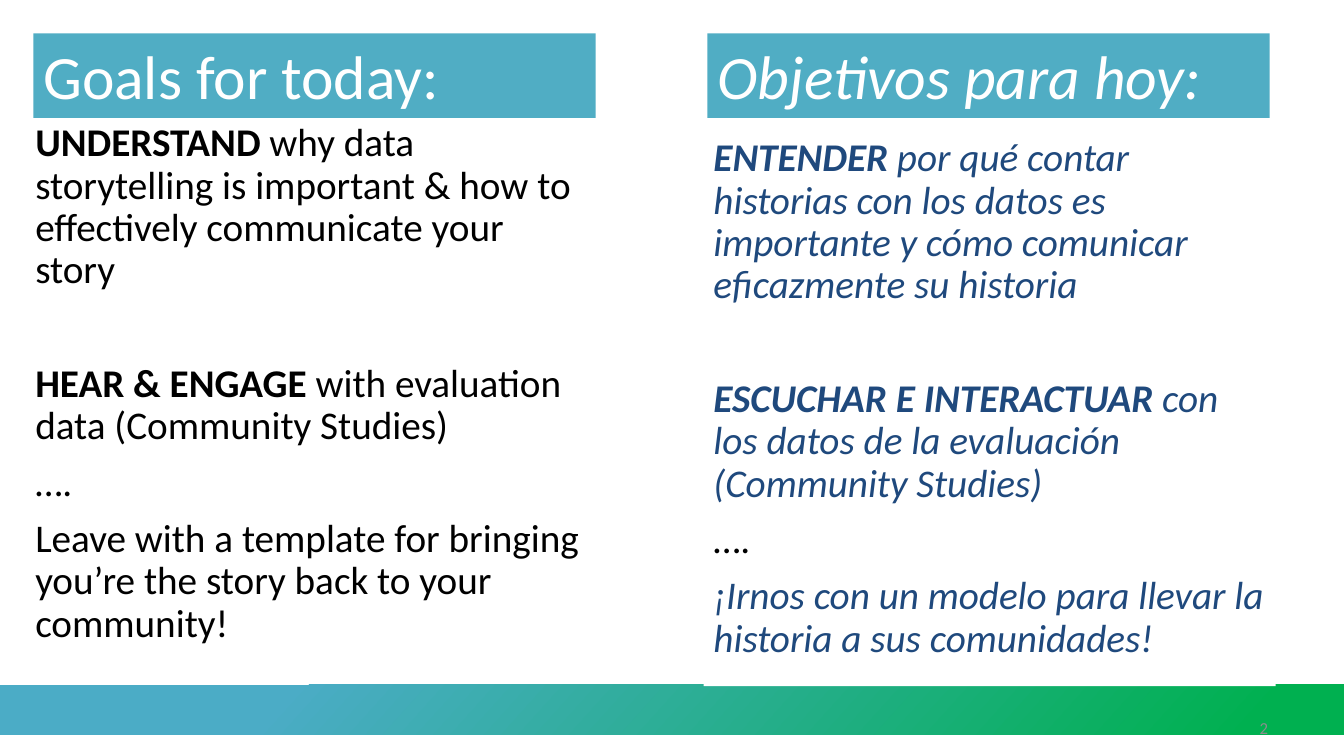
from dataclasses import dataclass

from pptx import Presentation
from pptx import util as u
from pptx.dml import color
from pptx.enum import shapes, text


@dataclass(frozen=True)
class Theme:
    font: str = "Calibri"
    title_size: int = 44
    body_size: int = 28
    number_size: int = 12
    white: str = "FFFFFF"
    black: str = "000000"
    navy: str = "1F497D"
    grey: str = "8C8C8C"
    banner: str = "50ADC4"
    footer_start: str = "4BACC6"
    footer_end: str = "00B050"


class GoalsSlide:
    def __init__(self, slide, theme):
        self.slide = slide
        self.theme = theme

    def box(self, left, top, width, height, fill=None):
        box = self.slide.shapes.add_textbox(
            u.Cm(left), u.Cm(top), u.Cm(width), u.Cm(height))
        box.text_frame.word_wrap = True
        if fill:
            box.fill.solid()
            box.fill.fore_color.rgb = color.RGBColor.from_string(fill)
        return box.text_frame

    def style(self, paragraph, size, ink, italic=False):
        font = paragraph.font
        font.name = self.theme.font
        font.size = u.Pt(size)
        font.italic = italic
        font.color.rgb = color.RGBColor.from_string(ink)

    def footer(self, top, width, height):
        band = self.slide.shapes.add_shape(
            shapes.MSO_SHAPE.RECTANGLE, 0, u.Cm(top), u.Cm(width), u.Cm(height))
        band.shadow.inherit = False
        band.line.fill.background()
        band.fill.gradient()
        band.fill.gradient_angle = 318
        stops = ((0.21, self.theme.footer_start), (0.93, self.theme.footer_end))
        for stop, (position, tint) in zip(band.fill.gradient_stops, stops):
            stop.position = position
            stop.color.rgb = color.RGBColor.from_string(tint)

    def heading(self, left, wording, italic):
        frame = self.box(left, 0.84, 14.17, 2.13, self.theme.banner)
        heading = frame.paragraphs[0]
        heading.add_run().text = wording
        self.style(heading, self.theme.title_size, self.theme.white, italic)

    def goals(self, left, top, goals, ink, italic):
        frame = self.box(left, top, 14.42, 13.94, self.theme.white)
        for index, (gap, lead, rest) in enumerate(goals):
            goal = frame.paragraphs[0] if index == 0 else frame.add_paragraph()
            goal.line_spacing = 0.9
            goal.space_before = u.Pt(gap)
            if lead:
                strong = goal.add_run()
                strong.text = lead
                strong.font.bold = True
            goal.add_run().text = rest
            ellipsis = rest == "…."
            self.style(goal, self.theme.body_size,
                       self.theme.black if ellipsis else ink,
                       italic and not ellipsis)

    def number(self, wording):
        frame = self.box(24.59, 17.83, 7.62, 1.02)
        frame.vertical_anchor = text.MSO_ANCHOR.MIDDLE
        number = frame.paragraphs[0]
        number.alignment = text.PP_ALIGN.RIGHT
        number.add_run().text = wording
        self.style(number, self.theme.number_size, self.theme.grey)


ENGLISH = (
    (0, "UNDERSTAND ", "why data storytelling is important & how to "
                       "effectively communicate your story"),
    (51, "HEAR & ENGAGE ", "with evaluation data (Community Studies)"),
    (10, "", "…."),
    (10, "", "Leave with a template for bringing you’re the story back "
             "to your community!"),
)
SPANISH = (
    (0, "ENTENDER", " por qué contar historias con los datos es importante "
                    "y cómo comunicar eficazmente su historia"),
    (51, "ESCUCHAR E INTERACTUAR ", "con los datos de la evaluación "
                                    "(Community Studies)"),
    (10, "", "…."),
    (10, "", "¡Irnos con un modelo para llevar la historia a sus comunidades!"),
)


def main():
    deck = Presentation()
    deck.slide_width, deck.slide_height = u.Cm(33.87), u.Cm(19.05)
    theme = Theme()
    page = GoalsSlide(deck.slides.add_slide(deck.slide_layouts[6]), theme)
    page.footer(17.26, 33.87, 1.26)
    page.goals(0.64, 2.97, ENGLISH, theme.black, False)
    page.number("2")
    page.heading(0.84, "Goals for today:", False)
    page.heading(17.83, "Objetivos para hoy:", True)
    page.goals(17.73, 3.35, SPANISH, theme.navy, True)
    deck.save("out.pptx")


if __name__ == "__main__":
    main()
